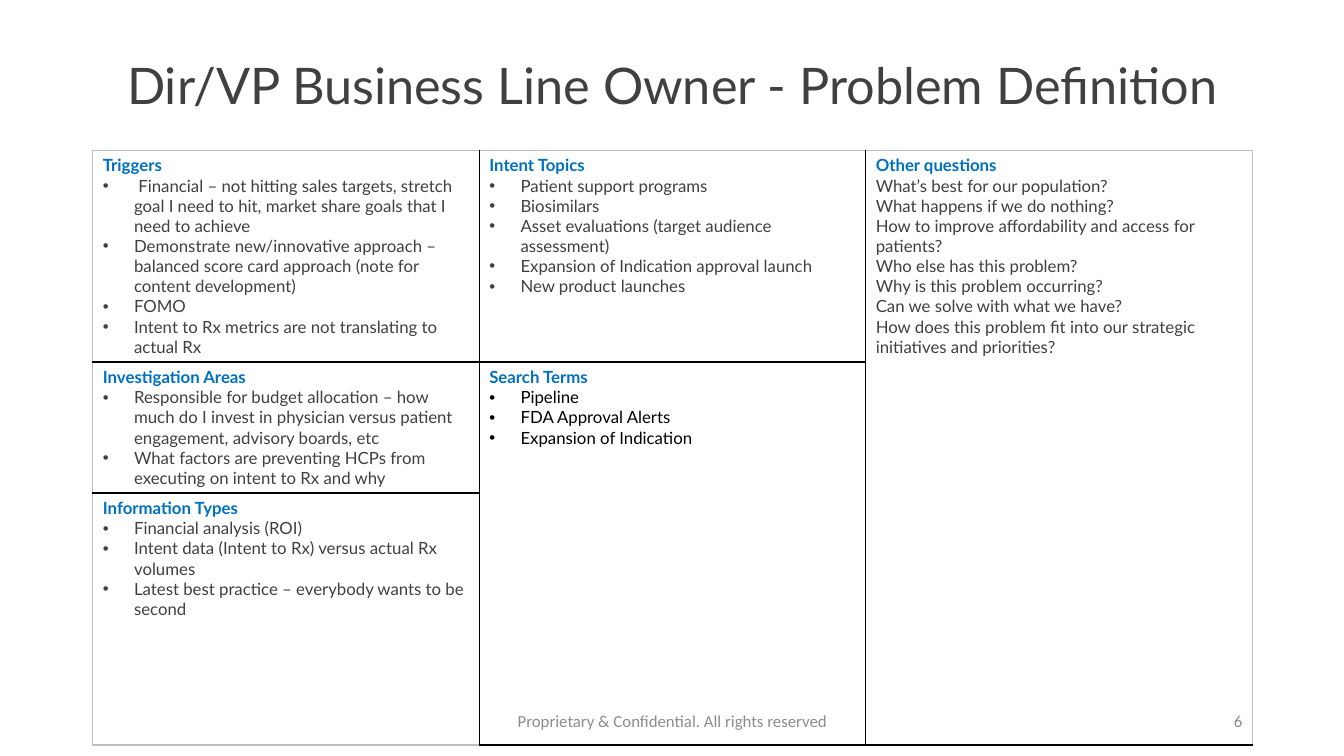
from lxml import etree
from pptx import Presentation
from pptx.dml.color import RGBColor
from pptx.enum.text import MSO_ANCHOR, PP_ALIGN
from pptx.oxml.ns import qn
from pptx.util import Inches, Pt

CENTER, RIGHT = PP_ALIGN.CENTER, PP_ALIGN.RIGHT
MIDDLE = MSO_ANCHOR.MIDDLE
BLUE, DARK, BLACK, GREY, EDGE = "0070C0", "404040", "000000", "8C8C8C", "BFBFBF"
LEFT, WIDTH = 0.92, 11.5
COLUMNS = 3
ROW_HEIGHTS = (2.1, 1.3, 2.5)
INDENT = 0.31

TRIGGERS = [
    " Financial – not hitting sales targets, stretch goal I need to hit, "
    "market share goals that I need to achieve",
    "Demonstrate new/innovative approach – balanced score card approach "
    "(note for content development)",
    "FOMO",
    "Intent to Rx metrics are not translating to actual Rx",
]
INTENT_TOPICS = [
    "Patient support programs",
    "Biosimilars",
    "Asset evaluations (target audience assessment)",
    "Expansion of Indication approval launch",
    "New product launches",
]
OTHER_QUESTIONS = [
    "What’s best for our population?",
    "What happens if we do nothing?",
    "How to improve affordability and access for patients?",
    "Who else has this problem?",
    "Why is this problem occurring?",
    "Can we solve with what we have?",
    "How does this problem fit into our strategic initiatives and priorities?",
]
INVESTIGATION_AREAS = [
    "Responsible for budget allocation – how much do I invest in physician "
    "versus patient engagement, advisory boards, etc",
    "What factors are preventing HCPs from executing on intent to Rx and why",
]
SEARCH_TERMS = ["Pipeline", "FDA Approval Alerts", "Expansion of Indication"]
INFORMATION_TYPES = [
    "Financial analysis (ROI)",
    "Intent data (Intent to Rx) versus actual Rx volumes",
    "Latest best practice – everybody wants to be second",
]
SECTIONS = [
    (0, 0, "Triggers", TRIGGERS, DARK, True),
    (0, 1, "Intent Topics", INTENT_TOPICS, DARK, True),
    (0, 2, "Other questions", OTHER_QUESTIONS, DARK, False),
    (1, 0, "Investigation Areas", INVESTIGATION_AREAS, DARK, True),
    (1, 1, "Search Terms", SEARCH_TERMS, BLACK, True),
    (2, 0, "Information Types", INFORMATION_TYPES, DARK, True),
]


def rgb(value):
    return RGBColor.from_string(value)


def write(p, text, color, size=12, name="Lato", bold=False):
    r = p.add_run()
    r.text = text
    r.font.color.rgb = rgb(color)
    for key, value in {"size": Pt(size), "name": name, "bold": bold}.items():
        setattr(r.font, key, value)


def add_bullet(p):
    pPr = p._p.get_or_add_pPr()
    pPr.set("marL", str(Inches(INDENT)))
    pPr.set("indent", str(-Inches(INDENT)))
    etree.SubElement(pPr, qn("a:buFont")).set("typeface", "Arial")
    etree.SubElement(pPr, qn("a:buChar")).set("char", "•")


def set_borders(cell, row, col):
    outer = {
        "a:lnL": col == 0,
        "a:lnR": col == COLUMNS - 1,
        "a:lnT": row == 0,
        "a:lnB": row == len(ROW_HEIGHTS) - 1,
    }
    tcPr = cell._tc.get_or_add_tcPr()
    for tag, is_outer in outer.items():
        ln = etree.SubElement(tcPr, qn(tag), w=str(Pt(1)))
        fill = etree.SubElement(ln, qn("a:solidFill"))
        color = EDGE if is_outer else BLACK
        etree.SubElement(fill, qn("a:srgbClr")).set("val", color)


def fill_section(cell, heading, items, color, bulleted):
    tf = cell.text_frame
    write(tf.paragraphs[0], heading, BLUE, bold=True)
    for item in items:
        p = tf.add_paragraph()
        if bulleted:
            add_bullet(p)
        write(p, item, color)


def add_problem_table(s):
    rows = len(ROW_HEIGHTS)
    frame = s.shapes.add_table(rows, COLUMNS, Inches(LEFT), Inches(1.49),
                               Inches(WIDTH), Inches(sum(ROW_HEIGHTS)))
    table = frame.table
    table.first_row = table.horz_banding = False
    for row, height in enumerate(ROW_HEIGHTS):
        table.rows[row].height = Inches(height)
        for col in range(COLUMNS):
            cell = table.cell(row, col)
            set_borders(cell, row, col)
            cell.fill.background()
    table.cell(0, 2).merge(table.cell(2, 2))
    table.cell(1, 1).merge(table.cell(2, 1))
    for row, col, *content in SECTIONS:
        fill_section(table.cell(row, col), *content)


def add_title(s, text):
    title = s.shapes.title
    box = {"left": LEFT, "top": 0.4, "width": WIDTH, "height": 0.95}
    for key, value in box.items():
        setattr(title, key, Inches(value))
    tf = title.text_frame
    tf.vertical_anchor = MIDDLE
    p = tf.paragraphs[0]
    p.alignment = CENTER
    p.line_spacing = 0.9
    write(p, text, DARK, 36)


def add_footer(s, left, width, text, align):
    sp = s.shapes.add_textbox(Inches(left), Inches(6.95), Inches(width), Inches(0.4))
    tf = sp.text_frame
    tf.word_wrap = True
    tf.vertical_anchor = MIDDLE
    p = tf.paragraphs[0]
    p.alignment = align
    write(p, text, GREY, name="Calibri")


def main():
    """Build the problem definition slide."""
    prs = Presentation()
    prs.slide_width, prs.slide_height = Inches(13.33), Inches(7.5)
    s = prs.slides.add_slide(prs.slide_layouts[5])
    add_title(s, "Dir/VP Business Line Owner - Problem Definition")
    add_problem_table(s)
    add_footer(s, 4.42, 4.5, "Proprietary & Confidential. All rights reserved", CENTER)
    add_footer(s, 9.42, 3, "6", RIGHT)
    prs.save("out.pptx")


if __name__ == "__main__":
    main()
